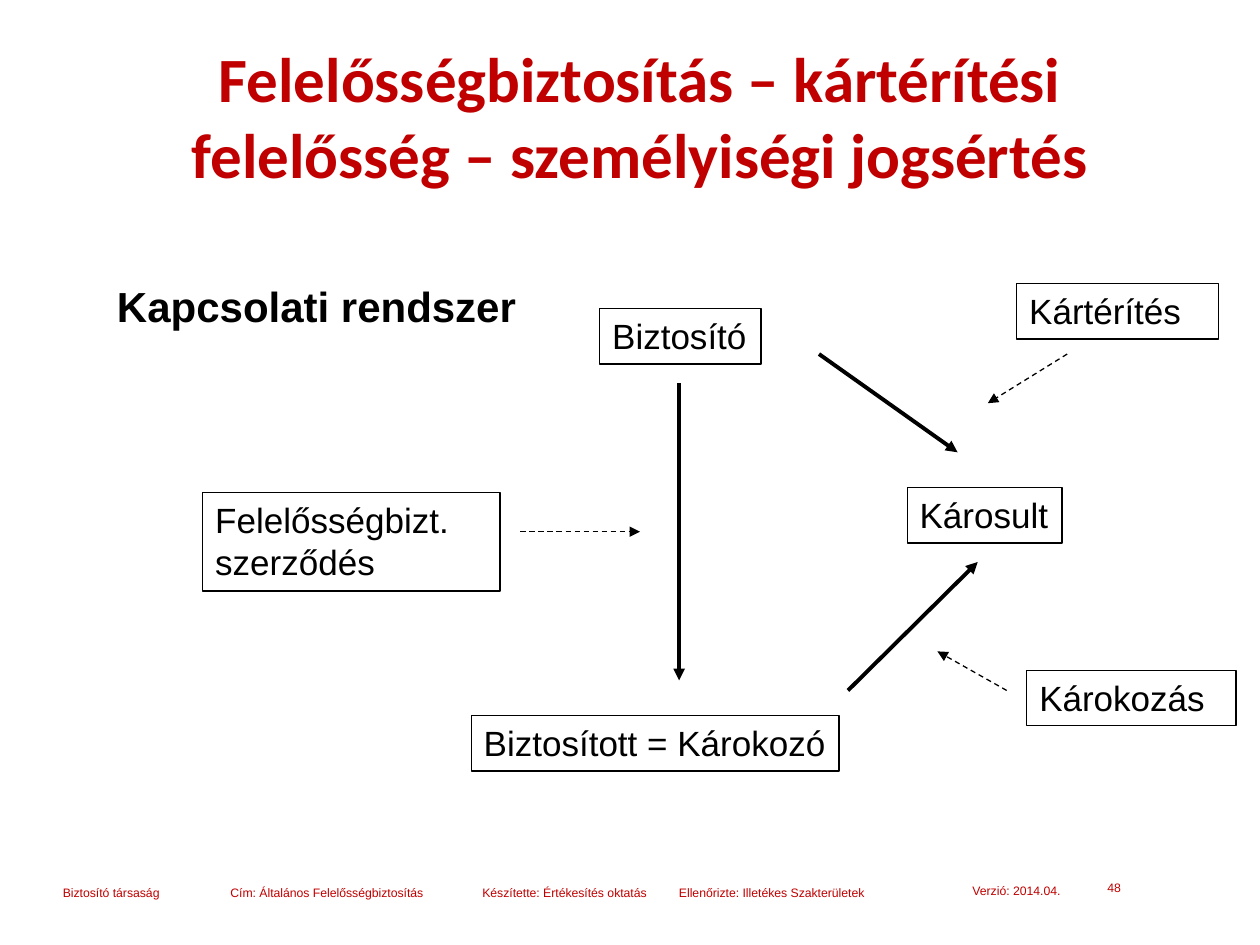
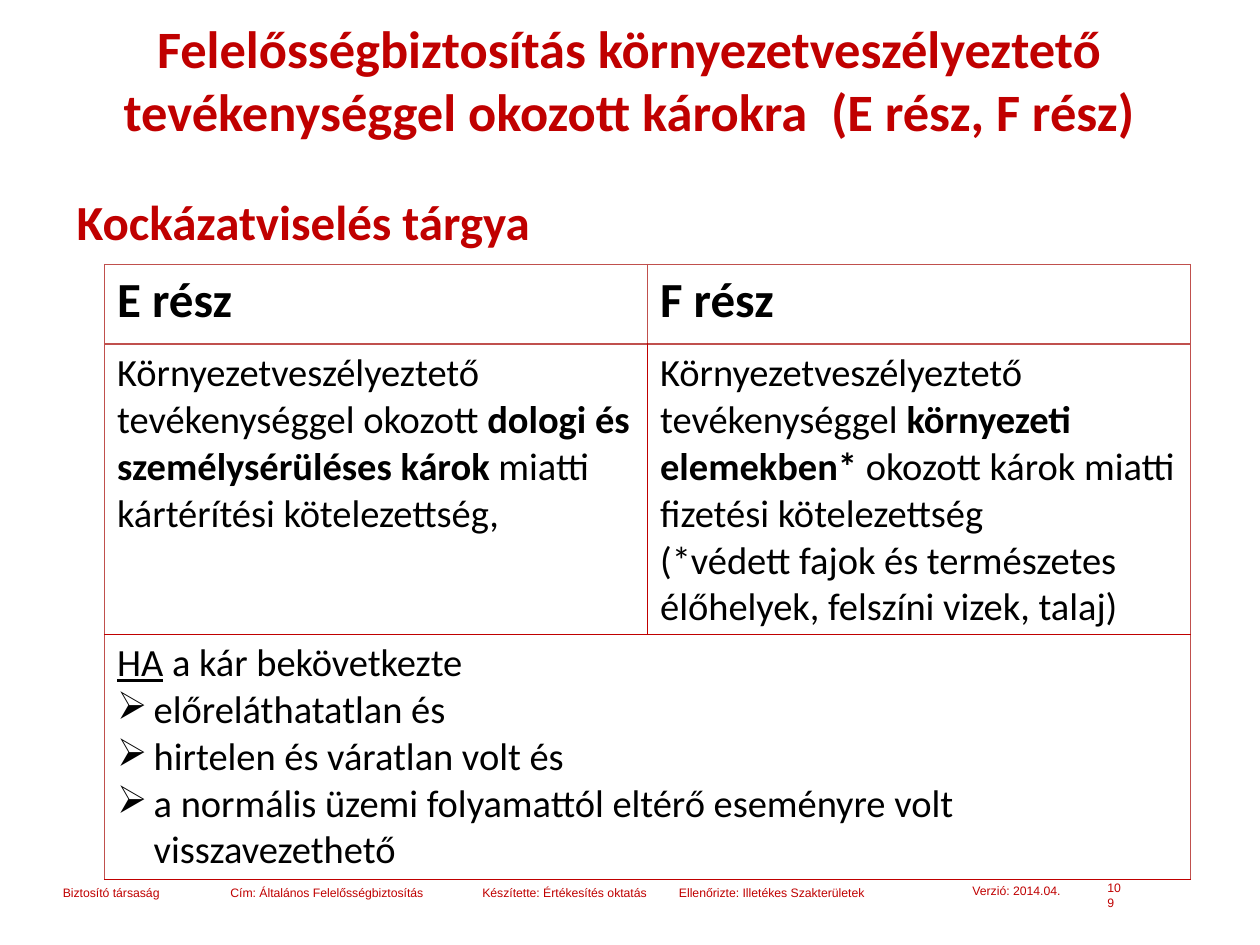
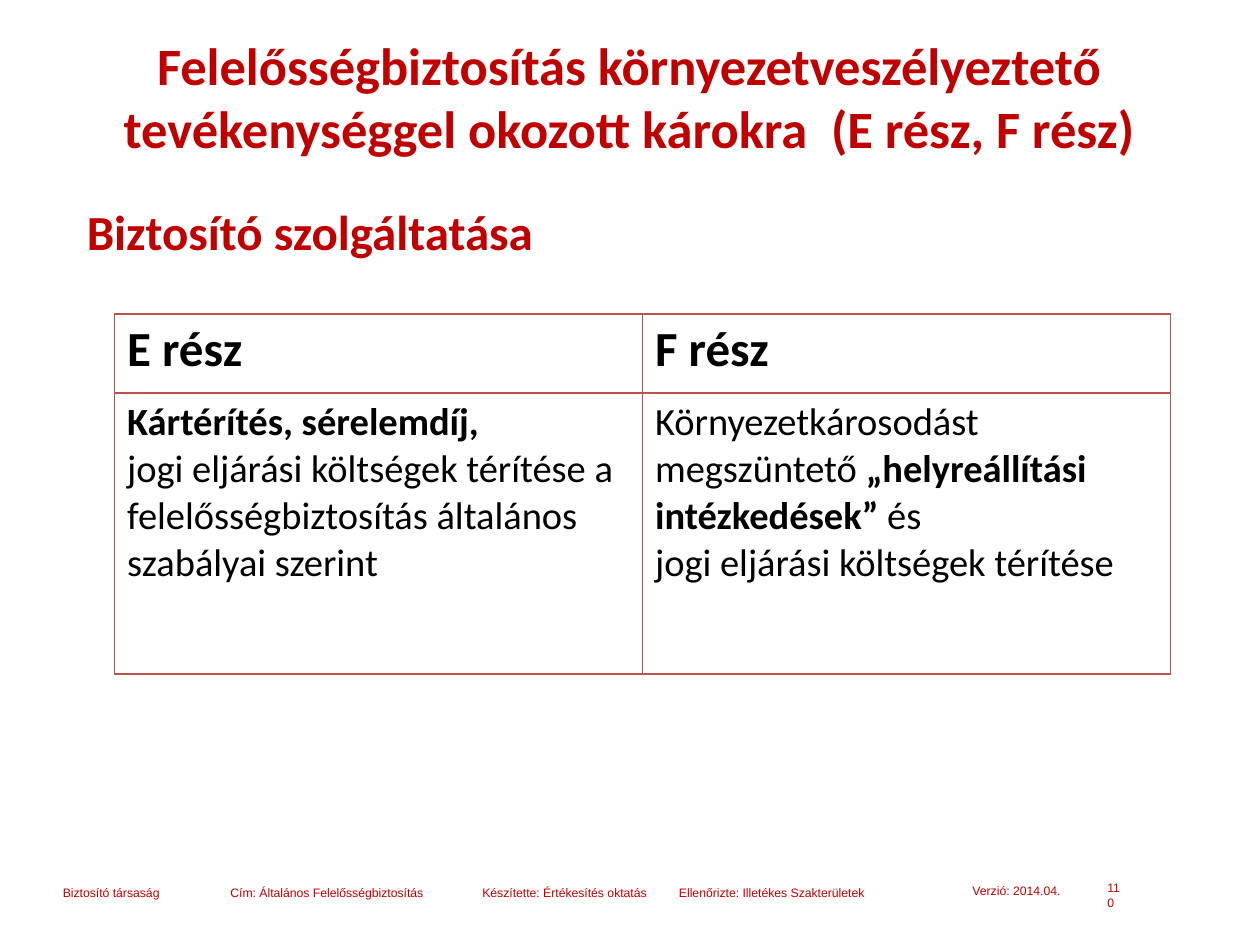
from lxml import etree
from pptx import Presentation
from pptx import util as u
from pptx.dml.color import RGBColor
from pptx.enum import dml, shapes, text
from pptx.oxml.ns import qn

RED = RGBColor(0xC0, 0x00, 0x00)
BRICK = RGBColor(0xC0, 0x50, 0x4D)
BLACK = RGBColor(0x00, 0x00, 0x00)

FOOTERS = [
    ("Biztosító társaság", 0.4, 6.98, 1.26),
    ("Cím: Általános Felelősségbiztosítás", 1.73, 6.98, 1.85),
    ("Készítette: Értékesítés oktatás", 3.73, 6.98, 1.64),
    ("Ellenőrizte: Illetékes Szakterületek", 5.29, 6.98, 2.08),
    ("Verzió: 2014.04.", 7.62, 6.96, 1.16),
]
ENVIRONMENT_TITLE = (
    "Felelősségbiztosítás környezetveszélyeztető "
    "tevékenységgel okozott károkra  (E rész, F rész)"
)
HEADER = ["E rész", "F rész"]


def add_bullet(paragraph):
    properties = paragraph._p.get_or_add_pPr()
    properties.set("marL", str(u.Inches(0.29)))
    properties.set("indent", str(-u.Inches(0.29)))
    etree.SubElement(properties, qn("a:buChar"), char="➢")
    tabs = etree.SubElement(properties, qn("a:tabLst"))
    etree.SubElement(tabs, qn("a:tab"), pos=str(u.Inches(0.39)), algn="l")


def write(frame, content, font="Calibri", size=22, color=BLACK, bold=False,
          align=text.PP_ALIGN.LEFT, bullets_from=None):
    paragraphs = [content] if isinstance(content, str) else content
    for index, runs in enumerate(paragraphs):
        paragraph = frame.add_paragraph() if index else frame.paragraphs[0]
        paragraph.alignment = align
        if bullets_from is not None and index >= bullets_from:
            add_bullet(paragraph)
        for words, mark in [(runs, "")] if isinstance(runs, str) else runs:
            run = paragraph.add_run()
            run.text = words
            run.font.name = font
            run.font.size = u.Pt(size)
            run.font.color.rgb = color
            run.font.bold = bold or mark == "bold"
            run.font.underline = mark == "underline"


def draw_border(cell, side, color, points):
    line = etree.SubElement(cell._tc.get_or_add_tcPr(), qn(f"a:ln{side}"),
                            w=str(u.Pt(points)))
    fill = etree.SubElement(line, qn("a:solidFill"))
    etree.SubElement(fill, qn("a:srgbClr"), val=str(color))


class Deck:
    def __init__(self):
        self.presentation = Presentation()
        self.presentation.slide_width = u.Inches(10)
        self.presentation.slide_height = u.Inches(7.5)
        self.slide = None

    def start_slide(self, number):
        layout = self.presentation.slide_layouts[6]
        self.slide = self.presentation.slides.add_slide(layout)
        small = dict(font="Arial", size=7, color=RED)
        self.text_box(number, 8.69, 6.94, 0.31, 0.23, **small)
        for label, left, top, width in FOOTERS:
            self.text_box(label, left, top, width, 0.22, **small)

    def text_box(self, content, left, top, width, height,
                 anchor=text.MSO_ANCHOR.TOP, **style):
        box = self.slide.shapes.add_textbox(
            u.Inches(left), u.Inches(top), u.Inches(width), u.Inches(height))
        box.text_frame.word_wrap = True
        box.text_frame.vertical_anchor = anchor
        write(box.text_frame, content, **style)

    def title(self, content, left, top, width, height, size):
        self.text_box(content, left, top, width, height, size=size, color=RED,
                      bold=True, align=text.PP_ALIGN.CENTER,
                      anchor=text.MSO_ANCHOR.MIDDLE)

    def subtitle(self, content, left, top, width):
        self.text_box(content, left, top, width, 0.71, size=28, color=RED,
                      bold=True)

    def node(self, label, left, top, width, height=0.44, wrap=False):
        shape = self.slide.shapes.add_shape(
            shapes.MSO_SHAPE.RECTANGLE, u.Inches(left), u.Inches(top),
            u.Inches(width), u.Inches(height))
        shape.shadow.inherit = False
        shape.fill.background()
        shape.line.color.rgb = BLACK
        shape.line.width = u.Pt(0.75)
        frame = shape.text_frame
        frame.word_wrap = wrap
        frame.vertical_anchor = text.MSO_ANCHOR.TOP
        frame.auto_size = text.MSO_AUTO_SIZE.SHAPE_TO_FIT_TEXT
        write(frame, label, font="Arial", size=20)

    def arrow(self, start, end, dashed=False):
        connector = self.slide.shapes.add_connector(
            shapes.MSO_CONNECTOR.STRAIGHT,
            *[u.Inches(value) for value in (*start, *end)])
        connector.line.color.rgb = BLACK
        connector.line.width = u.Pt(0.75 if dashed else 2.25)
        if dashed:
            connector.line.dash_style = dml.MSO_LINE.DASH
        properties = connector._element.spPr
        etree.SubElement(properties.find(qn("a:ln")), qn("a:tailEnd"),
                         type="triangle")
        etree.SubElement(properties, qn("a:effectLst"))

    def table(self, left, top, column_width, row_heights, body,
              hairlines=False, merge_last=False):
        rows = [HEADER] + body
        count = len(HEADER)
        table = self.slide.shapes.add_table(
            len(rows), count, u.Inches(left), u.Inches(top),
            u.Inches(column_width * count), u.Inches(sum(row_heights))).table
        table.first_row = table.horz_banding = False
        for column in table.columns:
            column.width = u.Inches(column_width)
        for row, height in zip(table.rows, row_heights):
            row.height = u.Inches(height)
        if merge_last:
            table.cell(len(rows) - 1, 0).merge(table.cell(len(rows) - 1, count - 1))
        for r in range(len(rows)):
            for c in range(count):
                cell = table.cell(r, c)
                strong = {"L": c == 0, "R": c + cell.span_width == count,
                          "T": r < 2, "B": r == 0}
                for side, is_strong in strong.items():
                    if is_strong or r == 0 or not hairlines:
                        draw_border(cell, side, BRICK, 1)
                    else:
                        draw_border(cell, side, RED, 0.25)
                cell.fill.background()
                if cell.is_spanned:
                    continue
                if r == 0:
                    write(cell.text_frame, rows[r][c], size=28, bold=True)
                else:
                    write(cell.text_frame, rows[r][c],
                          bullets_from=1 if cell.is_merge_origin else None)


def add_relations(deck):
    deck.start_slide("48")
    deck.text_box("Kapcsolati rendszer", 0.83, 2.18, 4.11, 0.5,
                  font="Arial", size=24, bold=True)
    deck.node("Felelősségbizt. szerződés", 1.61, 3.91, 2.36, 0.78, wrap=True)
    deck.node("Biztosító", 4.76, 2.45, 1.28)
    deck.node("Biztosított = Károkozó", 3.74, 5.68, 2.92)
    deck.node("Károsult", 7.2, 3.87, 1.23)
    deck.node("Kártérítés", 8.07, 2.25, 1.6, wrap=True)
    deck.node("Károkozás", 8.15, 5.32, 1.66, wrap=True)
    deck.arrow((5.39, 3.04), (5.39, 5.4))
    deck.arrow((6.73, 5.48), (7.76, 4.46))
    deck.arrow((6.5, 2.81), (7.6, 3.59))
    deck.arrow((4.13, 4.22), (5.08, 4.22), dashed=True)
    deck.arrow((7.99, 5.48), (7.44, 5.17), dashed=True)
    deck.arrow((8.47, 2.81), (7.84, 3.2), dashed=True)
    deck.title("Felelősségbiztosítás – kártérítési felelősség – "
               "személyiségi jogsértés", 0.58, 0.29, 9, 1.25, 36)


def add_risk_subject(deck):
    deck.start_slide("109")
    deck.title(ENVIRONMENT_TITLE, 0.35, 0, 9.29, 1.26, 30)
    deck.subtitle("Kockázatviselés tárgya", 0.51, 1.47, 4.88)
    property_damage = [[
        ("Környezetveszélyeztető tevékenységgel okozott ", ""),
        ("dologi és személysérüléses károk ", "bold"),
        ("miatti kártérítési kötelezettség,", ""),
    ]]
    nature_damage = [
        [("Környezetveszélyeztető tevékenységgel ", ""),
         ("környezeti elemekben*", "bold"),
         (" okozott károk miatti fizetési kötelezettség", "")],
        "(*védett fajok és természetes élőhelyek, felszíni vizek, talaj)",
    ]
    conditions = [
        [("HA", "underline"), (" a kár bekövetkezte", "")],
        "előreláthatatlan és",
        "hirtelen és váratlan volt és",
        "a normális üzemi folyamattól eltérő eseményre volt visszavezethető",
    ]
    deck.table(0.83, 2.1, 4.31, [0.63, 2.2, 1.95],
               [[property_damage, nature_damage], [conditions]],
               hairlines=True, merge_last=True)


def add_insurer_service(deck):
    deck.start_slide("110")
    deck.title(ENVIRONMENT_TITLE, 0.35, 0.13, 9.29, 1.26, 30)
    deck.subtitle("Biztosító szolgáltatása", 0.59, 1.55, 4.49)
    compensation = [
        [("Kártérítés, sérelemdíj,", "bold")],
        "jogi eljárási költségek térítése a felelősségbiztosítás "
        "általános szabályai szerint",
    ]
    restoration = [
        [("Környezetkárosodást megszüntető ", ""),
         ("„helyreállítási intézkedések”", "bold"), (" és", "")],
        "jogi eljárási költségek térítése",
    ]
    deck.table(0.91, 2.49, 4.19, [0.63, 2.23], [[compensation, restoration]])


def main():
    deck = Deck()
    add_relations(deck)
    add_risk_subject(deck)
    add_insurer_service(deck)
    deck.presentation.save("out.pptx")


if __name__ == "__main__":
    main()
